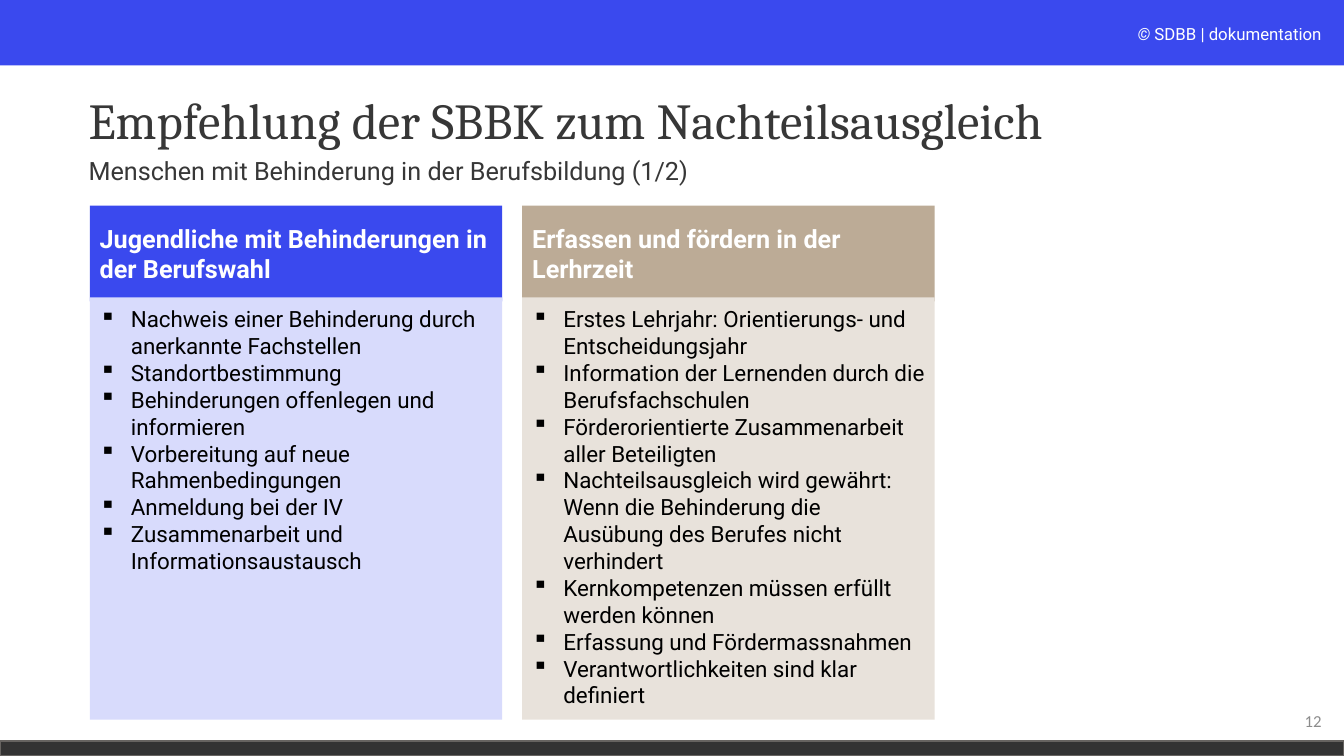
from pptx import Presentation
from pptx.dml.color import RGBColor as RGB
from pptx.enum.shapes import MSO_SHAPE as SHAPE
from pptx.enum.text import MSO_ANCHOR as ANCHOR, PP_ALIGN as ALIGN
from pptx.oxml.ns import qn
from pptx.util import Inches, Pt
from lxml.etree import SubElement

WIDTH, HEIGHT = Inches(13.33), Inches(7.5)
COLORS = {
    "blue": "3A49EE", "pale_blue": "D8DBFC", "sand": "BCAB96",
    "pale_sand": "E8E2DB", "dark": "333333", "edge": "666360",
    "ink": "373737", "grey": "8C8C8C", "white": "FFFFFF",
    "soft_white": "FCFDFE", "black": "000000",
}
COLUMN_LEFT, COLUMN_PITCH, COLUMN_WIDTH = 6.68, 32.18, 30.68
COLUMNS = [
    ("Jugendliche mit Behinderungen in der Berufswahl", "blue", "pale_blue", [
        "Nachweis einer Behinderung durch anerkannte Fachstellen",
        "Standortbestimmung",
        "Behinderungen offenlegen und informieren",
        "Vorbereitung auf neue Rahmenbedingungen",
        "Anmeldung bei der IV",
        "Zusammenarbeit und Informationsaustausch",
    ]),
    ("Erfassen und fördern in der Lerhrzeit", "sand", "pale_sand", [
        "Erstes Lehrjahr: Orientierungs- und Entscheidungsjahr",
        "Information der Lernenden durch die Berufsfachschulen",
        "Förderorientierte Zusammenarbeit aller Beteiligten",
        "Nachteilsausgleich wird gewährt: Wenn die Behinderung die "
        "Ausübung des Berufes nicht verhindert",
        "Kernkompetenzen müssen erfüllt werden können",
        "Erfassung und Fördermassnahmen",
        "Verantwortlichkeiten sind klar definiert",
    ]),
]


def rgb(name):
    """Return the named colour."""
    return RGB.from_string(COLORS[name])


def place(x, y, w, h):
    """Turn percentages of the slide into lengths."""
    return [round(share * size / 100) for share, size in
            zip((x, y, w, h), (WIDTH, HEIGHT, WIDTH, HEIGHT))]


def style(font, size, color, name="Roboto", bold=False):
    """Set the look of a font."""
    font.name, font.size, font.bold = name, Pt(size), bold
    font.color.rgb = rgb(color)


def add_block(slide, box, fill, line=None):
    """Add a filled rectangle."""
    sp = slide.shapes.add_shape(SHAPE.RECTANGLE, *place(*box))
    sp.shadow.inherit = False
    sp.fill.solid()
    sp.fill.fore_color.rgb = rgb(fill)
    if line:
        sp.line.color.rgb = rgb(line)
        sp.line.width = Pt(1)
    else:
        sp.line.fill.background()
    return sp


def add_label(slide, box, text, size, color, name="Roboto",
              align=ALIGN.LEFT, anchor=ANCHOR.TOP, spacing=1.0):
    """Add a wrapped one-paragraph text box and return its paragraph."""
    tf = slide.shapes.add_textbox(*place(*box)).text_frame
    tf.word_wrap, tf.vertical_anchor = True, anchor
    p = tf.paragraphs[0]
    p.text, p.alignment, p.line_spacing = text, align, spacing
    for r in p.runs:
        style(r.font, size, color, name)
    return p


def add_bullet(p):
    """Give a paragraph a square bullet and a hanging indent."""
    pPr = p._p.get_or_add_pPr()
    indent = Inches(0.31)
    pPr.set("marL", str(indent))
    pPr.set("indent", str(-indent))
    SubElement(pPr, qn("a:buChar")).set("char", "▪")


def add_column(slide, index, heading, head_fill, body_fill, items):
    """Add a heading block above a block of bullets."""
    x = COLUMN_LEFT + index * COLUMN_PITCH
    tf = add_block(slide, (x, 27.2, COLUMN_WIDTH, 12.67), head_fill).text_frame
    tf.word_wrap, tf.vertical_anchor = True, ANCHOR.MIDDLE
    tf.text = heading
    tf.paragraphs[0].alignment = ALIGN.LEFT
    style(tf.paragraphs[0].runs[0].font, 18, "white", bold=True)

    tf = add_block(slide, (x, 39.33, COLUMN_WIDTH, 55.87), body_fill).text_frame
    tf.word_wrap, tf.vertical_anchor = True, ANCHOR.TOP
    tf.margin_top = Inches(0.08)
    tf.text = "\n".join(items)
    for p in tf.paragraphs:
        add_bullet(p)
        p.alignment = ALIGN.LEFT
        style(p.runs[0].font, 16, "black")


def main():
    """Build and save the slide."""
    prs = Presentation()
    prs.slide_width, prs.slide_height = WIDTH, HEIGHT
    slide = prs.slides.add_slide(prs.slide_layouts[6])

    add_block(slide, (0, 0, 100, 8.67), "blue")
    add_block(slide, (0, 98, 100, 2), "dark", "edge")
    p = add_label(slide, (64.65, 2.53, 34.43, 4), "© ", 12, "soft_white",
                  align=ALIGN.RIGHT)
    p.runs[0].font.italic = True
    r = p.add_run()
    r.text = "SDBB | dokumentation"
    style(r.font, 12, "white")

    add_label(slide, (5.85, 6.67, 79.5, 19.33),
              "Empfehlung der SBBK zum Nachteilsausgleich", 36, "ink",
              "Cambria", anchor=ANCHOR.MIDDLE, spacing=0.9)
    add_label(slide, (76.58, 92.67, 22.5, 5.33), "12", 12, "grey", "Calibri",
              ALIGN.RIGHT, ANCHOR.MIDDLE)
    add_label(slide, (5.85, 20.4, 66.08, 7.2),
              "Menschen mit Behinderung in der Berufsbildung (1/2)", 18, "ink",
              spacing=0.9)
    for index, column in enumerate(COLUMNS):
        add_column(slide, index, *column)
    prs.save("out.pptx")


if __name__ == "__main__":
    main()
